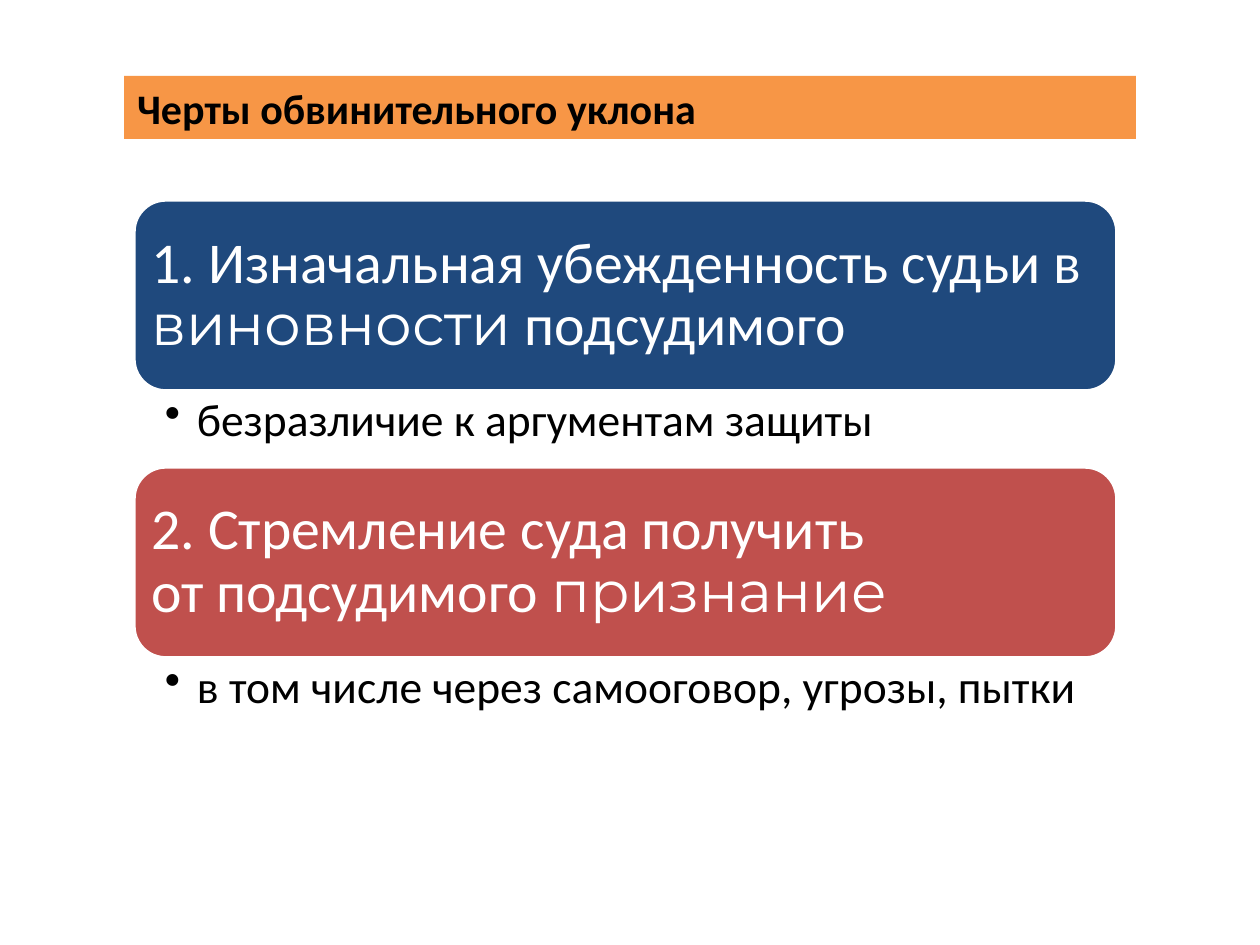
"""Build the slide on the features of accusatory bias."""
from lxml import etree
from pptx import Presentation
from pptx.dml.color import RGBColor
from pptx.enum.shapes import MSO_SHAPE
from pptx.enum.text import MSO_ANCHOR, MSO_AUTO_SIZE, PP_ALIGN
from pptx.oxml.ns import qn
from pptx.util import Emu, Pt

ROUNDED = MSO_SHAPE.ROUNDED_RECTANGLE
TOP, MIDDLE = MSO_ANCHOR.TOP, MSO_ANCHOR.MIDDLE
NO_AUTOFIT = MSO_AUTO_SIZE.NONE
LEFT = PP_ALIGN.LEFT

ORANGE = RGBColor(0xF7, 0x96, 0x46)
NAVY = RGBColor(0x1F, 0x49, 0x7D)
RED = RGBColor(0xC0, 0x50, 0x4D)
WHITE = RGBColor(0xFF, 0xFF, 0xFF)
BLACK = RGBColor(0, 0, 0)

EMU_PER_PX = 914400 / 126
CARD_LEFT, CARD_TOP, CARD_WIDTH = 134, 200, 983
CARD_HEIGHT, DETAIL_HEIGHT = 191, 76

BODY_FONT, ACCENT_FONT = "Calibri", "Montserrat"
FEATURES = [
    (NAVY,
     [("1. Изначальная убежденность судьи в ", BODY_FONT),
      ("виновности", ACCENT_FONT),
      (" подсудимого", BODY_FONT)],
     "безразличие к аргументам защиты"),
    (RED,
     [("2. Стремление суда получить \nот подсудимого ", BODY_FONT),
      ("признание", ACCENT_FONT)],
     "в том числе через самооговор, угрозы, пытки"),
]


def px(value):
    return Emu(round(value * EMU_PER_PX))


def write(frame, parts, size, color, bold=False, anchor=TOP, insets=(13, 6, 13, 6), spacing=None):
    frame.word_wrap = True
    frame.auto_size = NO_AUTOFIT
    frame.vertical_anchor = anchor
    frame.margin_left, frame.margin_top, frame.margin_right, frame.margin_bottom = map(px, insets)
    paragraph = frame.paragraphs[0]
    paragraph.alignment = LEFT
    paragraph.line_spacing = spacing
    for text, font_name in parts:
        for index, line in enumerate(text.split("\n")):
            if index:
                paragraph.add_line_break()
            run = paragraph.add_run()
            run.text = line
            run.font.name = font_name
            run.font.size = Pt(size)
            run.font.bold = bold
            run.font.color.rgb = color
    return paragraph


class FeatureSlide:
    def __init__(self, presentation):
        self.slide = presentation.slides.add_slide(presentation.slide_layouts[5])
        self.heading_size, self.card_size, self.detail_size = 24, 33, 26
        self.spacing = 0.9

    def heading(self, text, left, top, width, height):
        title = self.slide.shapes.title
        title.left, title.top, title.width, title.height = map(px, (left, top, width, height))
        title.fill.solid()
        title.fill.fore_color.rgb = ORANGE
        write(title.text_frame, [(text, BODY_FONT)], self.heading_size, BLACK, bold=True)

    def card(self, parts, fill, left, top, width, height):
        card = self.slide.shapes.add_shape(ROUNDED, *map(px, (left, top, width, height)))
        card.shadow.inherit = False
        card.fill.solid()
        card.fill.fore_color.rgb = fill
        card.line.color.rgb = WHITE
        card.line.width = Pt(2)
        write(card.text_frame, parts, self.card_size, WHITE, anchor=MIDDLE,
              insets=(8, 8, 8, 8), spacing=self.spacing)

    def detail(self, text, left, top, width, height):
        box = self.slide.shapes.add_textbox(*map(px, (left, top, width, height)))
        paragraph = write(box.text_frame, [(text, BODY_FONT)], self.detail_size, BLACK,
                          insets=(31, 6, 32, 6), spacing=self.spacing)
        paragraph.level = 1
        properties = paragraph._p.get_or_add_pPr()
        properties.set("marL", str(px(32)))
        properties.set("indent", str(-px(32)))
        etree.SubElement(properties, qn("a:buChar")).set("char", "•")


def main():
    presentation = Presentation()
    presentation.slide_width, presentation.slide_height = px(1260), px(945)
    page = FeatureSlide(presentation)
    page.heading("Черты обвинительного уклона", 124, 76, 1012, 63)
    for index, (fill, statement, detail) in enumerate(FEATURES):
        top = CARD_TOP + index * (CARD_HEIGHT + DETAIL_HEIGHT)
        page.card(statement, fill, CARD_LEFT, top, CARD_WIDTH, CARD_HEIGHT)
        page.detail(detail, CARD_LEFT, top + CARD_HEIGHT, CARD_WIDTH, DETAIL_HEIGHT)
    presentation.save("out.pptx")


if __name__ == "__main__":
    main()
